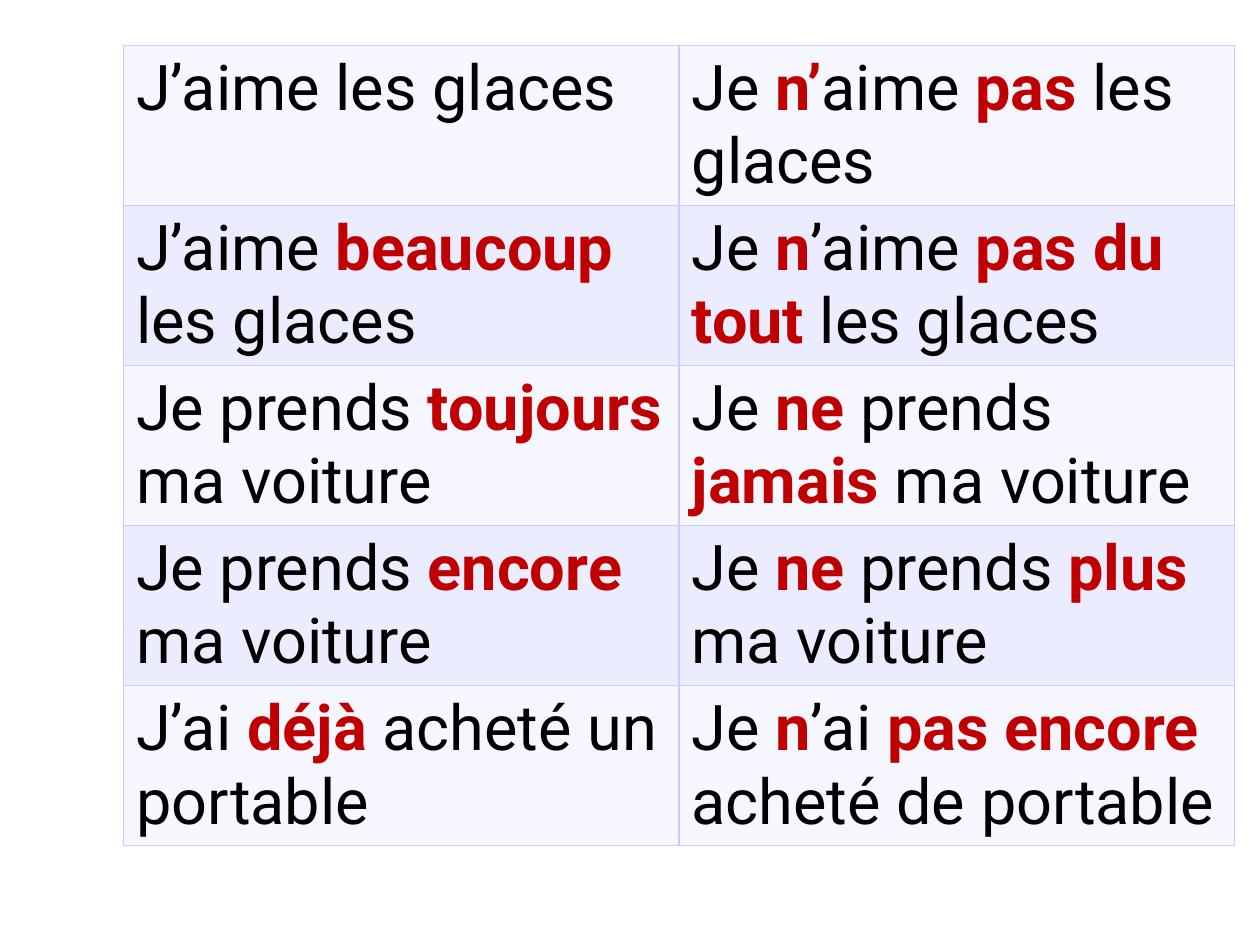
from lxml import etree
from pptx import Presentation
from pptx import util as u
from pptx.dml.color import RGBColor
from pptx.oxml import ns


def color(hex_string):
    return RGBColor.from_string(hex_string)


def add_borders(cell, hex_string, points):
    properties = cell._tc.get_or_add_tcPr()
    for side in ("lnL", "lnR", "lnT", "lnB"):
        line = etree.SubElement(properties, ns.qn(f"a:{side}"), w=str(u.Pt(points)))
        fill = etree.SubElement(line, ns.qn("a:solidFill"))
        etree.SubElement(fill, ns.qn("a:srgbClr"), val=hex_string)


sentence_pairs = [
    ("J’aime les glaces", "Je *n’*aime *pas* les glaces"),
    ("J’aime *beaucoup *les glaces", "Je *n*’aime* pas du tout* les glaces"),
    ("Je prends *toujours *ma voiture", "Je *ne *prends *jamais *ma voiture"),
    ("Je prends *encore *ma voiture", "Je *ne *prends *plus *ma voiture"),
    ("J’ai *déjà* acheté un portable", "Je *n*’ai *pas encore *acheté de portable"),
]
band_colors = ["F6F6FF", "ECECFF"]
word_colors = ["000000", "C00000"]

deck = Presentation()
deck.slide_width, deck.slide_height = u.Inches(10), u.Inches(7.5)
slide = deck.slides.add_slide(deck.slide_layouts[6])
column_width = int(deck.slide_width * 0.441)
row_height = int(deck.slide_height * 0.169)

negation = slide.shapes.add_table(
    len(sentence_pairs), 2,
    int(deck.slide_width * 0.098), int(deck.slide_height * 0.048),
    column_width * 2, row_height * len(sentence_pairs),
).table
negation.first_row = False
negation.horz_banding = False

for row, pair in enumerate(sentence_pairs):
    for column, sentence in enumerate(pair):
        cell = negation.cell(row, column)
        add_borders(cell, "CCCCFF", 1)
        cell.fill.solid()
        cell.fill.fore_color.rgb = color(band_colors[row % 2])
        paragraph = cell.text_frame.paragraphs[0]
        for index, words in enumerate(sentence.split("*")):
            run = paragraph.add_run()
            run.text = words
            run.font.name = "Roboto"
            run.font.size = u.Pt(36)
            run.font.bold = index % 2 == 1
            run.font.color.rgb = color(word_colors[index % 2])

deck.save("out.pptx")
